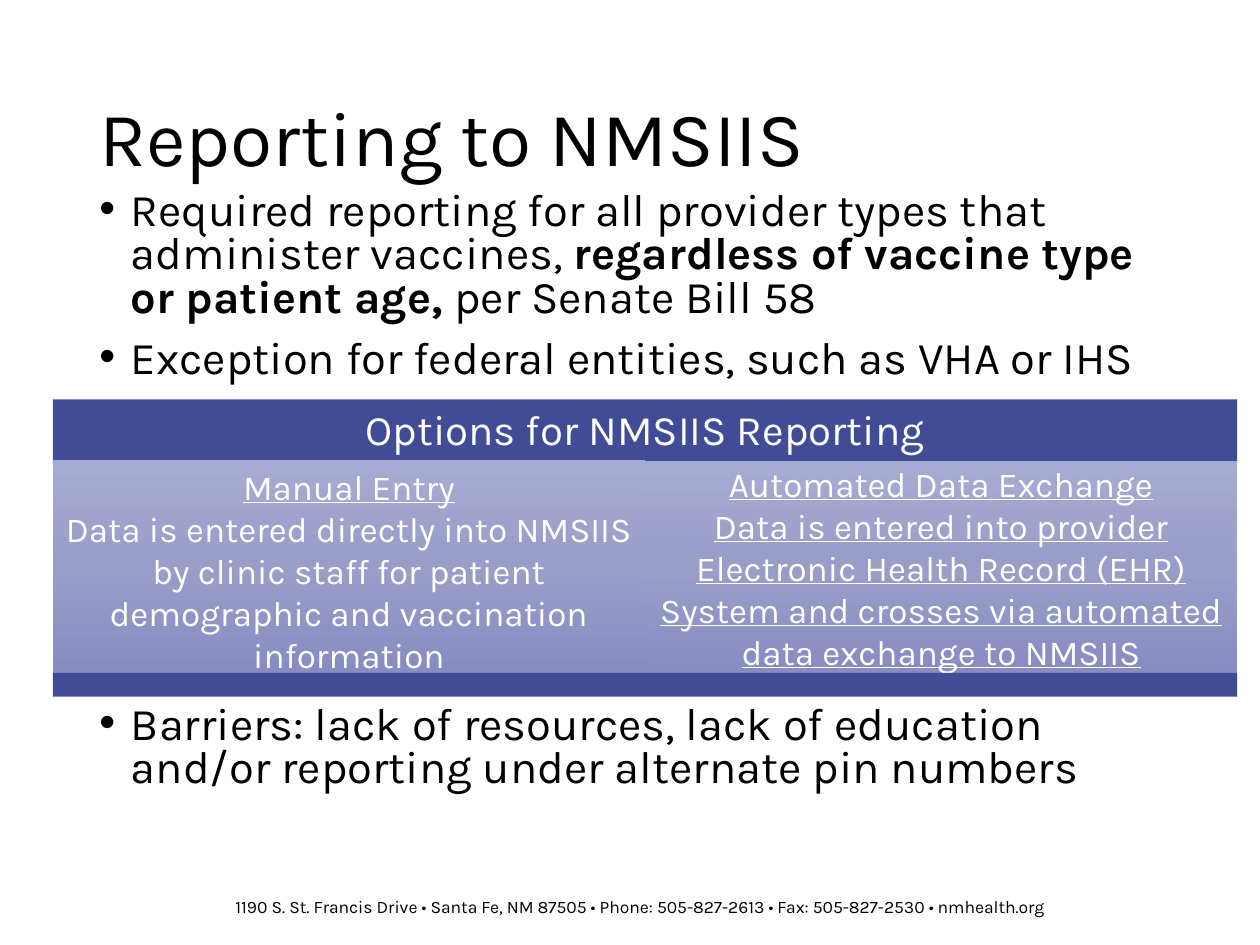
"""Build the slide on reporting options for NMSIIS."""
from copy import deepcopy
from dataclasses import dataclass

from lxml import etree
from pptx import Presentation
from pptx import util as u
from pptx.dml.color import RGBColor
from pptx.enum import shapes, text
from pptx.oxml.ns import qn

WIDTH, HEIGHT = u.Inches(10), u.Inches(7.5)
FONT = "Karla"
BLACK = RGBColor(0x00, 0x00, 0x00)
WHITE = RGBColor(0xFF, 0xFF, 0xFF)
INDIGO = RGBColor(0x42, 0x4B, 0x95)
LILACS = (
    RGBColor(0xA7, 0xAA, 0xD1),
    RGBColor(0x9A, 0x9D, 0xC8),
    RGBColor(0x88, 0x8C, 0xC3),
)


@dataclass(frozen=True)
class Box:
    """A place given in percent of the slide's width and height."""
    left: float
    top: float
    width: float
    height: float

    def emu(self) -> tuple[int, int, int, int]:
        """Return the place in slide units."""
        return (int(WIDTH * self.left / 100), int(HEIGHT * self.top / 100),
                int(WIDTH * self.width / 100), int(HEIGHT * self.height / 100))


@dataclass(frozen=True)
class Run:
    """A stretch of text with one look."""
    words: str
    bold: bool = False
    underline: bool = False


@dataclass(frozen=True)
class Style:
    """The look shared by the paragraphs of one text frame."""
    size: float
    color: RGBColor = BLACK
    spacing: float = 1.0
    centered: bool = False
    bullet: bool = False
    before: float = 0


@dataclass(frozen=True)
class Option:
    """One way of reporting, shown as a panel."""
    box: Box
    top_inset: float
    paragraphs: list[list[Run]]


TITLE = Style(44, spacing=0.9)
BODY = Style(25.9, spacing=0.8, bullet=True, before=10)
FOOTER = Style(10)
HEADING = Style(24, WHITE, spacing=0.9, centered=True)
PANEL = Style(20, WHITE, centered=True)

BAND_LEFT, BAND_WIDTH = 4.2, 94
HALF = BAND_WIDTH / 2

REQUIREMENTS = [
    [Run("Required reporting for all provider types that administer vaccines, "),
     Run("regardless of vaccine type or patient age, ", bold=True),
     Run("per Senate Bill 58")],
    [Run("Exception for federal entities, such as VHA or IHS")],
]
BARRIERS = [[Run("Barriers: lack of resources, lack of education and/or "
                 "reporting under alternate pin numbers")]]
ADDRESS = [[Run("1190 S. St. Francis Drive • Santa Fe, NM 87505 • "
                "Phone: 505-827-2613 • Fax: 505-827-2530 • nmhealth.org")]]
OPTIONS = [
    Option(Box(BAND_LEFT, 48.67, HALF, 22.53), 0.14, [
        [Run("Manual Entry", underline=True)],
        [Run("Data is entered directly into NMSIIS by clinic staff for patient "
             "demographic and vaccination information")],
    ]),
    Option(Box(BAND_LEFT + HALF, 48.8, HALF, 22.53), 0.08, [
        [Run("Automated Data Exchange", underline=True)],
        [Run("Data is entered into provider Electronic Health Record (EHR) System "
             "and crosses via automated data exchange to NMSIIS", underline=True)],
    ]),
]


def add_bullet(p) -> None:
    """Give a paragraph a round bullet and a hanging indent."""
    pPr = p._p.get_or_add_pPr()
    pPr.set("marL", str(u.Inches(0.25)))
    pPr.set("indent", str(-u.Inches(0.25)))
    etree.SubElement(pPr, qn("a:buFont")).set("typeface", "Arial")
    etree.SubElement(pPr, qn("a:buChar")).set("char", "•")


def write(tf, paragraphs: list[list[Run]], style: Style) -> None:
    """Fill a text frame with styled paragraphs."""
    tf.word_wrap = True
    for i, runs in enumerate(paragraphs):
        p = tf.add_paragraph() if i else tf.paragraphs[0]
        if style.bullet:
            add_bullet(p)
        p.alignment = text.PP_ALIGN.CENTER if style.centered else text.PP_ALIGN.LEFT
        p.line_spacing = style.spacing
        p.space_before = u.Pt(style.before if i else 0)
        for run in runs:
            r = p.add_run()
            r.text = run.words
            r.font.name = FONT
            r.font.size = u.Pt(style.size)
            r.font.color.rgb = style.color
            r.font.bold = run.bold
            r.font.underline = run.underline


def add_text(s, box: Box, paragraphs: list[list[Run]], style: Style,
             anchor=text.MSO_ANCHOR.TOP) -> None:
    """Add a text box."""
    tf = s.shapes.add_textbox(*box.emu()).text_frame
    tf.vertical_anchor = anchor
    write(tf, paragraphs, style)


def add_band(s, box: Box):
    """Add a plain indigo rectangle without outline."""
    sp = s.shapes.add_shape(shapes.MSO_SHAPE.RECTANGLE, *box.emu())
    sp.shadow.inherit = False
    sp.line.fill.background()
    sp.fill.solid()
    sp.fill.fore_color.rgb = INDIGO
    return sp


def set_insets(tf, top: float, other: float) -> None:
    """Set the margins of a middle-anchored text frame in inches."""
    tf.margin_left = tf.margin_right = tf.margin_bottom = u.Inches(other)
    tf.margin_top = u.Inches(top)
    tf.vertical_anchor = text.MSO_ANCHOR.MIDDLE


def fill_lilac(sp) -> None:
    """Shade a shape from light at the top to dark at the bottom."""
    sp.fill.gradient()
    sp.fill.gradient_angle = 270
    stops = sp._element.spPr.find(qn("a:gradFill")).find(qn("a:gsLst"))
    stops.insert(1, deepcopy(stops[0]))
    for i, (stop, color) in enumerate(zip(sp.fill.gradient_stops, LILACS)):
        stop.position = i / 2
        stop.color.rgb = color


def add_option(s, option: Option) -> None:
    """Add a shaded panel that describes one option."""
    sp = add_band(s, option.box)
    fill_lilac(sp)
    set_insets(sp.text_frame, option.top_inset, 0.08)
    write(sp.text_frame, option.paragraphs, PANEL)


def main() -> None:
    """Build and save the slide."""
    prs = Presentation()
    prs.slide_width, prs.slide_height = WIDTH, HEIGHT
    s = prs.slides.add_slide(prs.slide_layouts[6])
    add_text(s, Box(17.7, 94.13, 70.9, 3.6), ADDRESS, FOOTER)
    add_text(s, Box(6.9, 5.33, 86.2, 19.33), [[Run("Reporting to NMSIIS")]],
             TITLE, text.MSO_ANCHOR.MIDDLE)
    add_text(s, Box(6.9, 19.6, 86.2, 22), REQUIREMENTS, BODY)
    add_text(s, Box(6.9, 74, 86.2, 12.4), BARRIERS, BODY)
    heading = add_band(s, Box(BAND_LEFT, 42.27, BAND_WIDTH, 6.93))
    set_insets(heading.text_frame, 0.12, 0.12)
    write(heading.text_frame, [[Run("Options for NMSIIS Reporting")]], HEADING)
    for option in OPTIONS:
        add_option(s, option)
    add_band(s, Box(BAND_LEFT, 71.2, BAND_WIDTH, 2.53))
    prs.save("out.pptx")


if __name__ == "__main__":
    main()
